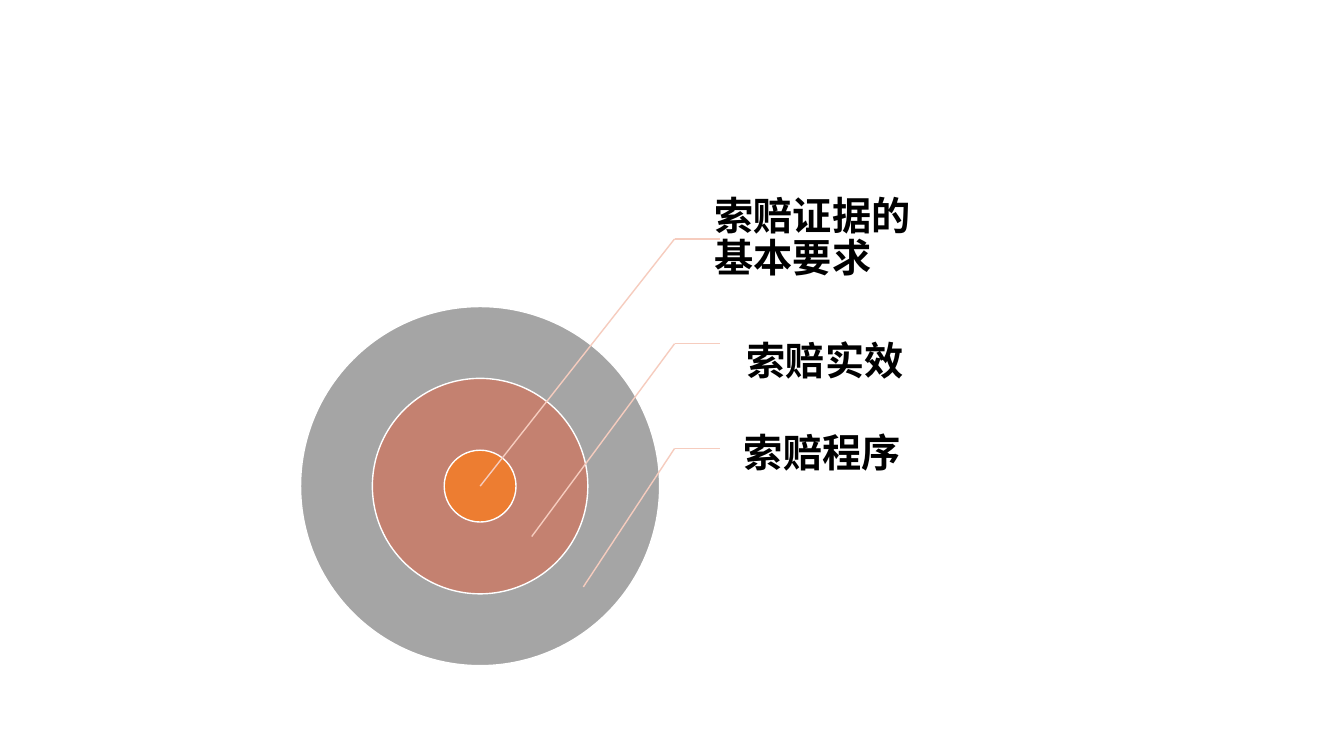
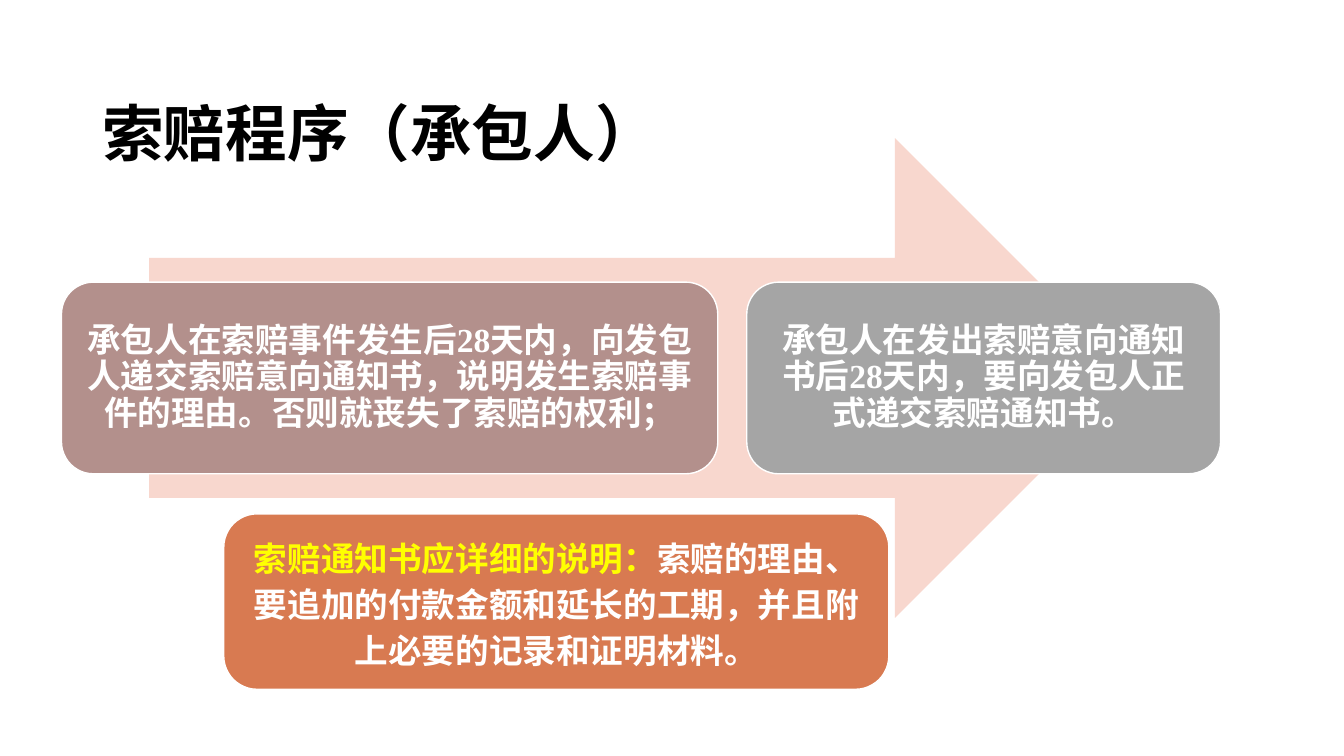
from pptx import Presentation
from pptx.dml.color import RGBColor
from pptx.enum.shapes import MSO_CONNECTOR, MSO_SHAPE
from pptx.enum.text import MSO_ANCHOR, PP_ALIGN
from pptx.oxml.ns import qn
from pptx.util import Cm, Pt
from lxml.etree import SubElement

BLACK = RGBColor(0x00, 0x00, 0x00)
WHITE = RGBColor(0xFF, 0xFF, 0xFF)
YELLOW = RGBColor(0xFF, 0xFF, 0x00)
GRAY = RGBColor(0xA5, 0xA5, 0xA5)
ROSE = RGBColor(0xC4, 0x81, 0x70)
ORANGE = RGBColor(0xED, 0x7D, 0x31)
MAUVE = RGBColor(0xB3, 0x90, 0x8C)
RUST = RGBColor(0xD8, 0x7A, 0x51)
PALE_PINK = RGBColor(0xF8, 0xD7, 0xCE)
LEADER_PINK = RGBColor(0xF6, 0xCC, 0xBE)
CJK_FONT = "Noto Sans CJK SC"
SERIF_FONT = "Times New Roman"


def write_text(shape, *runs, size=24, font=SERIF_FONT, align=PP_ALIGN.CENTER,
               spacing=0.9, margins=(0.25, 0.25, 0.25, 0.25)):
    frame = shape.text_frame
    frame.word_wrap = True
    frame.vertical_anchor = MSO_ANCHOR.MIDDLE
    (frame.margin_left, frame.margin_top,
     frame.margin_right, frame.margin_bottom) = map(Cm, margins)
    paragraph = frame.paragraphs[0]
    paragraph.alignment = align
    paragraph.line_spacing = spacing
    for text, color in runs:
        run = paragraph.add_run()
        run.text = text
        run.font.size = Pt(size)
        run.font.bold = True
        run.font.name = font
        run.font.color.rgb = color
        east_asian = SubElement(run.font._element, qn("a:ea"))
        east_asian.set("typeface", CJK_FONT)


def add_filled(slide, preset, box, fill, outline=WHITE):
    shape = slide.shapes.add_shape(preset, *map(Cm, box))
    shape.shadow.inherit = False
    shape.fill.solid()
    shape.fill.fore_color.rgb = fill
    if outline is None:
        shape.line.fill.background()
    else:
        shape.line.color.rgb = outline
        shape.line.width = Pt(1)
    return shape


def add_leader(slide, start, end):
    leader = slide.shapes.add_connector(
        MSO_CONNECTOR.STRAIGHT, *map(Cm, (*start, *end)))
    leader.line.color.rgb = LEADER_PINK
    leader.line.width = Pt(1)
    SubElement(leader._element.spPr, qn("a:effectLst"))


def add_label(slide, box, text, **text_format):
    label = slide.shapes.add_textbox(*map(Cm, box))
    write_text(label, (text, BLACK), **text_format)


def build_target_slide(slide):
    center_x, center_y, core = 12.1, 12.25, 1.81
    for multiple, fill in ((5, GRAY), (3, ROSE), (1, ORANGE)):
        diameter = core * multiple
        add_filled(slide, MSO_SHAPE.OVAL,
                   (center_x - diameter / 2, center_y - diameter / 2,
                    diameter, diameter), fill)

    topics = (
        ("索赔证据的基本要求", 17.45, 4.7, 5.89),
        ("索赔实效", 18.26, 7.82, 6.88),
        ("索赔程序", 18.19, 10.13, 6.45),
    )
    for ring, (topic, left, top, width) in enumerate(topics):
        bend = (17, 6.02 + 2.64 * ring)
        add_label(slide, (left, top, width, 2.64), topic, size=28,
                  font=CJK_FONT, align=PP_ALIGN.LEFT,
                  margins=(0.56, 0.1, 0.1, 0.1))
        add_leader(slide, bend, (18.14, bend[1]))
        add_leader(slide, bend,
                   (center_x + 1.3 * ring, center_y + 1.27 * ring))


def build_procedure_slide(slide):
    add_label(slide, (2.33, 1.01, 29.21, 3.68), "索赔程序（承包人）", size=44,
              align=PP_ALIGN.JUSTIFY, spacing=1.5,
              margins=(0.25, 0.13, 0.25, 0.13))
    add_filled(slide, MSO_SHAPE.RIGHT_ARROW, (3.76, 3.48, 24.84, 12.09),
               PALE_PINK, outline=None)

    steps = (
        (1.55, 16.54, MAUVE,
         "承包人在索赔事件发生后28天内，向发包人递交索赔意向通知书，"
         "说明发生索赔事件的理由。否则就丧失了索赔的权利；"),
        (18.82, 11.94, GRAY,
         "承包人在发出索赔意向通知书后28天内，要向发包人正式递交索赔通知书。"),
    )
    for left, width, fill, text in steps:
        step = add_filled(slide, MSO_SHAPE.ROUNDED_RECTANGLE,
                          (left, 7.11, width, 4.83), fill)
        write_text(step, (text, WHITE))

    notice = add_filled(slide, MSO_SHAPE.ROUNDED_RECTANGLE,
                        (5.64, 12.95, 16.76, 4.42), RUST)
    notice.adjustments[0] = 0.19
    write_text(notice, ("索赔通知书应详细的说明：", YELLOW),
               ("索赔的理由、要追加的付款金额和延长的工期，"
                "并且附上必要的记录和证明材料。", WHITE),
               spacing=1.14, margins=(0.1, 0, 0.1, 0))


def main():
    presentation = Presentation()
    presentation.slide_width = Cm(33.87)
    presentation.slide_height = Cm(19.05)
    blank = presentation.slide_layouts[6]
    for build in (build_target_slide, build_procedure_slide):
        build(presentation.slides.add_slide(blank))
    presentation.save("out.pptx")


if __name__ == "__main__":
    main()
